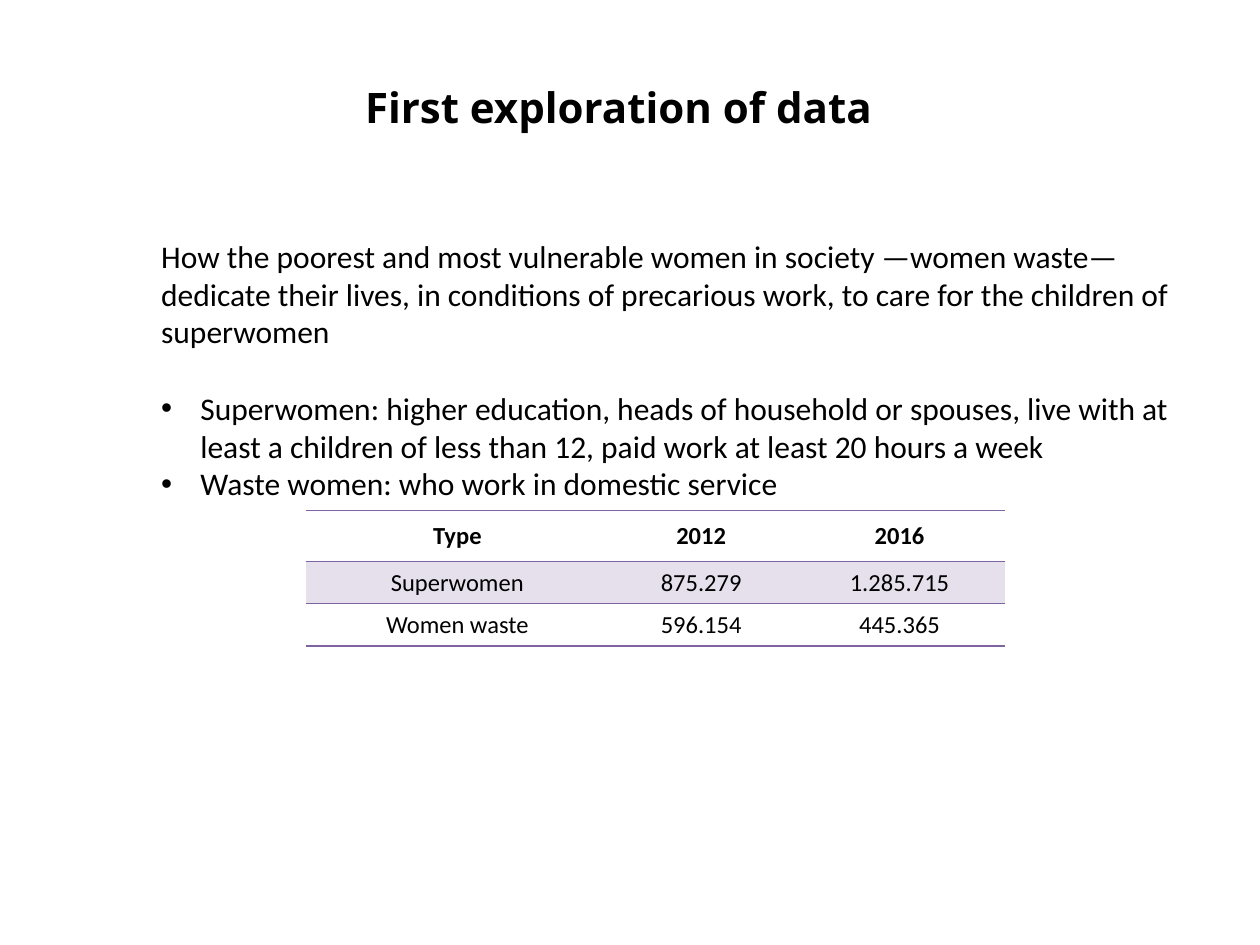
from lxml.etree import SubElement
from pptx import Presentation
from pptx.dml.color import RGBColor
from pptx.enum.text import MSO_ANCHOR, MSO_AUTO_SIZE, PP_ALIGN
from pptx.oxml.ns import qn
from pptx.util import Cm, Pt

TITLE = "First exploration of data"
INTRO = ("How the poorest and most vulnerable women in society —women waste— "
         "dedicate their lives, in conditions of precarious work, to care for "
         "the children of superwomen")
DEFINITIONS = [
    "Superwomen: higher education, heads of household or spouses, live with at "
    "least a children of less than 12, paid work at least 20 hours a week",
    "Waste women: who work in domestic service",
]
ROWS = [
    ("Type", "2012", "2016"),
    ("Superwomen", "875.279", "1.285.715"),
    ("Women waste", "596.154", "445.365"),
]
COLUMN_WIDTHS = [6.1, 3.73, 4.27]
ROW_HEIGHTS = [1.03, 0.85, 0.85]
COLORS = {"text": "000000", "rule": "8064A2", "band": "E6E0EC"}
NO_STYLE = "{2D5ABB26-0587-4C30-8999-92F81FD0307C}"
INDENT = Cm(0.79)


def add_text(paragraph, text, size, font="Calibri", bold=False):
    run = paragraph.add_run()
    run.text = text
    run.font.name = font
    run.font.size = Pt(size)
    run.font.bold = bold
    run.font.color.rgb = RGBColor.from_string(COLORS["text"])


def add_box(slide, left, top, width, height, wrap):
    box = slide.shapes.add_textbox(Cm(left), Cm(top), Cm(width), Cm(height))
    frame = box.text_frame
    frame.word_wrap = wrap
    frame.auto_size = MSO_AUTO_SIZE.SHAPE_TO_FIT_TEXT
    return frame


def add_bullet(paragraph):
    properties = paragraph._p.get_or_add_pPr()
    properties.set("marL", str(INDENT))
    properties.set("indent", str(-INDENT))
    SubElement(properties, qn("a:buFont"), typeface="Arial")
    SubElement(properties, qn("a:buChar"), char="•")


def add_rule(cell, side):
    """Draw a thin rule on the top ("T") or bottom ("B") of a cell."""
    line = SubElement(cell._tc.get_or_add_tcPr(), qn(f"a:ln{side}"), w=str(Pt(1)))
    fill = SubElement(line, qn("a:solidFill"))
    SubElement(fill, qn("a:srgbClr"), val=COLORS["rule"])


def add_data_table(slide):
    table = slide.shapes.add_table(
        len(ROWS), len(COLUMN_WIDTHS), Cm(6.17), Cm(10.29),
        Cm(sum(COLUMN_WIDTHS)), Cm(sum(ROW_HEIGHTS))).table
    table.first_row = table.horz_banding = False
    table._tbl.tblPr.find(qn("a:tableStyleId")).text = NO_STYLE
    for column, width in zip(table.columns, COLUMN_WIDTHS):
        column.width = Cm(width)
    for r, (row, height) in enumerate(zip(table.rows, ROW_HEIGHTS)):
        row.height = Cm(height)
        for cell, text in zip(row.cells, ROWS[r]):
            cell.vertical_anchor = MSO_ANCHOR.MIDDLE
            cell.margin_top = cell.margin_bottom = Cm(0.12)
            paragraph = cell.text_frame.paragraphs[0]
            paragraph.alignment = PP_ALIGN.CENTER
            add_text(paragraph, text, 14, bold=r == 0)
            if r < 2:
                add_rule(cell, "T")
            if r != 1:
                add_rule(cell, "B")
            if r == 1:
                cell.fill.solid()
                cell.fill.fore_color.rgb = RGBColor.from_string(COLORS["band"])
            else:
                cell.fill.background()


def main():
    presentation = Presentation()
    presentation.slide_width, presentation.slide_height = Cm(25.4), Cm(19.05)
    slide = presentation.slides.add_slide(presentation.slide_layouts[6])

    title = add_box(slide, 7.11, 1.52, 11.18, 1.27, wrap=False)
    add_text(title.paragraphs[0], TITLE, 24, font="Noto Sans", bold=True)

    body = add_box(slide, 3, 4.65, 21.3, 5.64, wrap=True)
    add_text(body.paragraphs[0], INTRO, 18)
    for i, definition in enumerate(DEFINITIONS):
        paragraph = body.add_paragraph()
        if i == 0:
            paragraph.space_before = Pt(22)
        add_bullet(paragraph)
        add_text(paragraph, definition, 18)

    add_data_table(slide)
    presentation.save("out.pptx")


if __name__ == "__main__":
    main()
